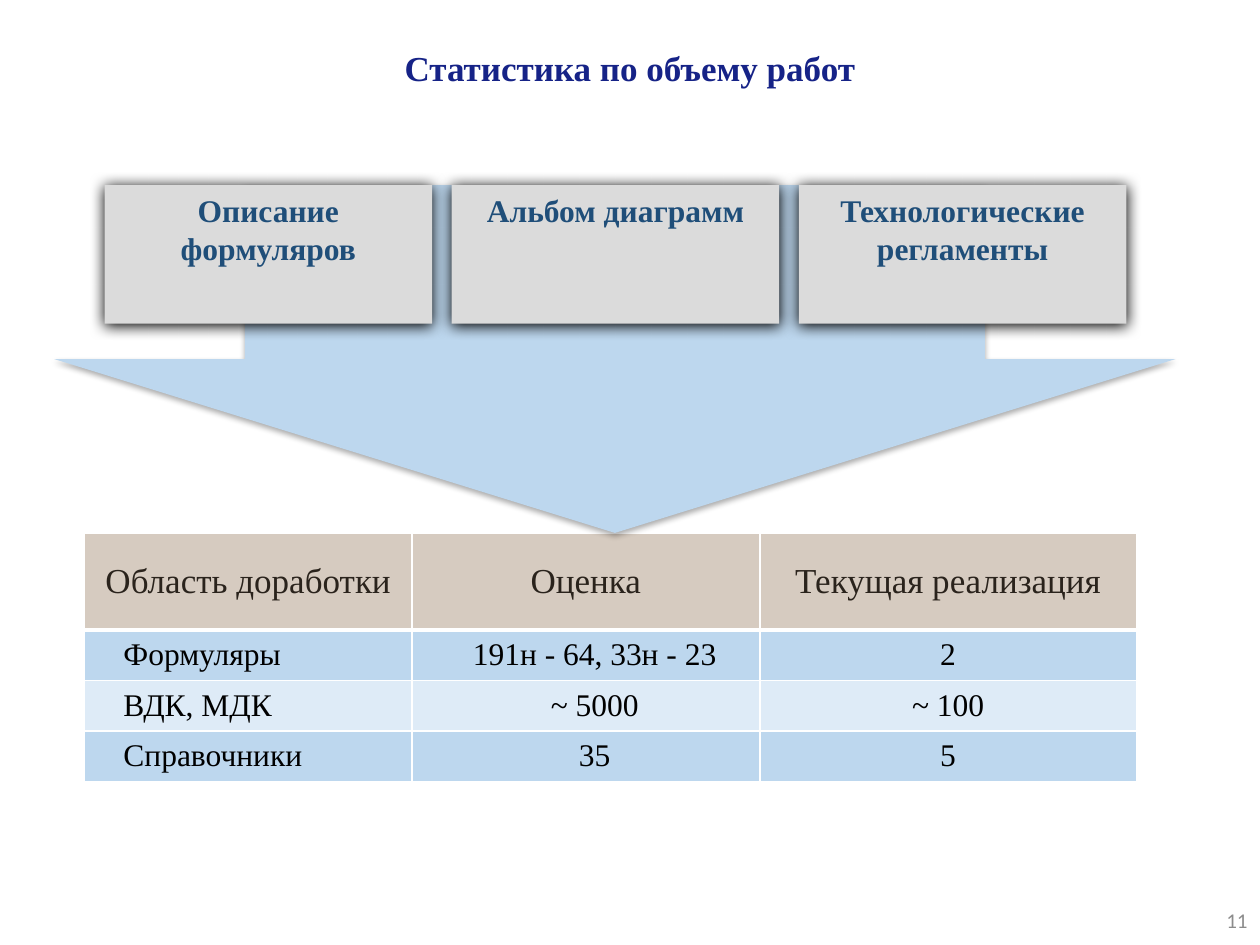
from lxml import etree
from pptx import Presentation, util as u
from pptx.dml import color as c
from pptx.enum import shapes, text as t
from pptx.oxml import ns

SERIF = "Times New Roman"
LEFT, MID, RIGHT = t.PP_ALIGN.LEFT, t.PP_ALIGN.CENTER, t.PP_ALIGN.RIGHT
TITLE = {"name": SERIF, "size": u.Pt(20), "bold": True, "color": "162387"}
LABEL = {"name": SERIF, "size": u.Pt(18), "bold": True, "color": "1F4E79"}
HEAD = {"name": SERIF, "size": u.Pt(20), "bold": False, "color": "2A231C"}
BODY = {"name": SERIF, "size": u.Pt(18), "bold": False, "color": "000000"}
PAGE = {"name": "Calibri", "size": u.Pt(12), "color": "8C8C8C"}


def paint(hue):
    return c.RGBColor.from_string(hue)


def sub(node, tag, **vals):
    item = etree.SubElement(node, ns.qn(tag))
    for key, val in vals.items():
        item.set(key, str(val))
    return item


class Deck:
    """Draws styled elements on the current slide."""

    def __init__(self):
        self.prs = Presentation()
        self.prs.slide_width, self.prs.slide_height = u.Inches(10), u.Inches(7.5)
        self.slide = self.prs.slides.add_slide(self.prs.slide_layouts[6])

    def label(self, frame, words, style, align):
        para = frame.paragraphs[0]
        para.alignment = align
        run = para.add_run()
        run.text = words
        for key, val in style.items():
            if key == "color":
                run.font.color.rgb = paint(val)
            else:
                setattr(run.font, key, val)

    def text(self, box, words, style, align):
        frame = self.slide.shapes.add_textbox(*map(u.Inches, box)).text_frame
        frame.word_wrap = True
        frame.vertical_anchor = t.MSO_ANCHOR.MIDDLE
        self.label(frame, words, style, align)

    def shape(self, kind, box, fill, shade):
        item = self.slide.shapes.add_shape(kind, *map(u.Inches, box))
        item.fill.solid()
        item.fill.fore_color.rgb = paint(fill)
        item.line.fill.background()
        item.shadow.inherit = False
        alpha, blur, dist = shade
        glow = sub(item._element.spPr.find(ns.qn("a:effectLst")), "a:outerShdw",
                   blurRad=u.Pt(blur), dist=u.Pt(dist), dir=5400000, rotWithShape=0)
        sub(sub(glow, "a:srgbClr", val="000000"), "a:alpha", val=alpha * 1000)
        return item

    def card(self, box, words):
        item = self.shape(shapes.MSO_SHAPE.RECTANGLE, box, "DBDBDB", (100, 8.5, 1))
        item.text_frame.word_wrap = True
        item.text_frame.vertical_anchor = t.MSO_ANCHOR.TOP
        self.label(item.text_frame, words, LABEL, MID)

    def arrow(self, box):
        item = self.shape(shapes.MSO_SHAPE.RIGHT_ARROW, box, "BDD7EE", (32, 3.5, 2.2))
        item.rotation = 90
        item.adjustments[0], item.adjustments[1] = 0.66, 0.5

    def cell(self, cell, words, style, align, fill, inset, edge):
        cell.margin_left = u.Inches(inset)
        cell.vertical_anchor = t.MSO_ANCHOR.MIDDLE
        props = cell._tc.get_or_add_tcPr()
        for side, wide in zip("LRTB", edge):
            line = sub(props, f"a:ln{side}", w=u.Pt(wide))
            sub(sub(line, "a:solidFill"), "a:srgbClr", val="FFFFFF")
        cell.fill.solid()
        cell.fill.fore_color.rgb = paint(fill)
        self.label(cell.text_frame, words, style, align)

    def table(self, box, wides, highs, rows):
        grid = self.slide.shapes.add_table(len(rows), len(wides), *map(u.Inches, box)).table
        for col, wide in zip(grid.columns, wides):
            col.width = u.Inches(wide)
        for r, (row, high) in enumerate(zip(rows, highs)):
            grid.rows[r].height = u.Inches(high)
            for n, words in enumerate(row):
                if r == 0:
                    look = HEAD, MID, "D6CBC0", 0.1, (1, 1, 1, 3)
                else:
                    look = (BODY, MID if n else LEFT, "BDD7EE" if r % 2 else "DEEBF7",
                            (0.31, 0.24, 0.1)[n], (1, 1, 3 if r == 1 else 1, 1))
                self.cell(grid.cell(r, n), words, *look)


def main():
    deck = Deck()
    deck.text((0, 0, 10, 1.07), "Статистика по объему работ", TITLE, MID)
    deck.table((0.67, 4.23, 8.35, 1.97), (2.6, 2.76, 2.99), (0.77, 0.4, 0.4, 0.4), [
        ("Область доработки", "Оценка", "Текущая реализация"),
        ("Формуляры", "191н - 64, 33н - 23", "2"),
        ("ВДК, МДК", "~ 5000", "~ 100"),
        ("Справочники", "35", "5"),
    ])
    deck.arrow((3.5, -1.6, 2.76, 8.9))
    names = "Описание формуляров", "Альбом диаграмм", "Технологические регламенты"
    for n, name in enumerate(names):
        deck.card((0.83 + n * 2.755, 1.47, 2.6, 1.1), name)
    deck.text((9.36, 7.1, 0.64, 0.4), "11", PAGE, RIGHT)
    deck.prs.save("out.pptx")


if __name__ == "__main__":
    main()
